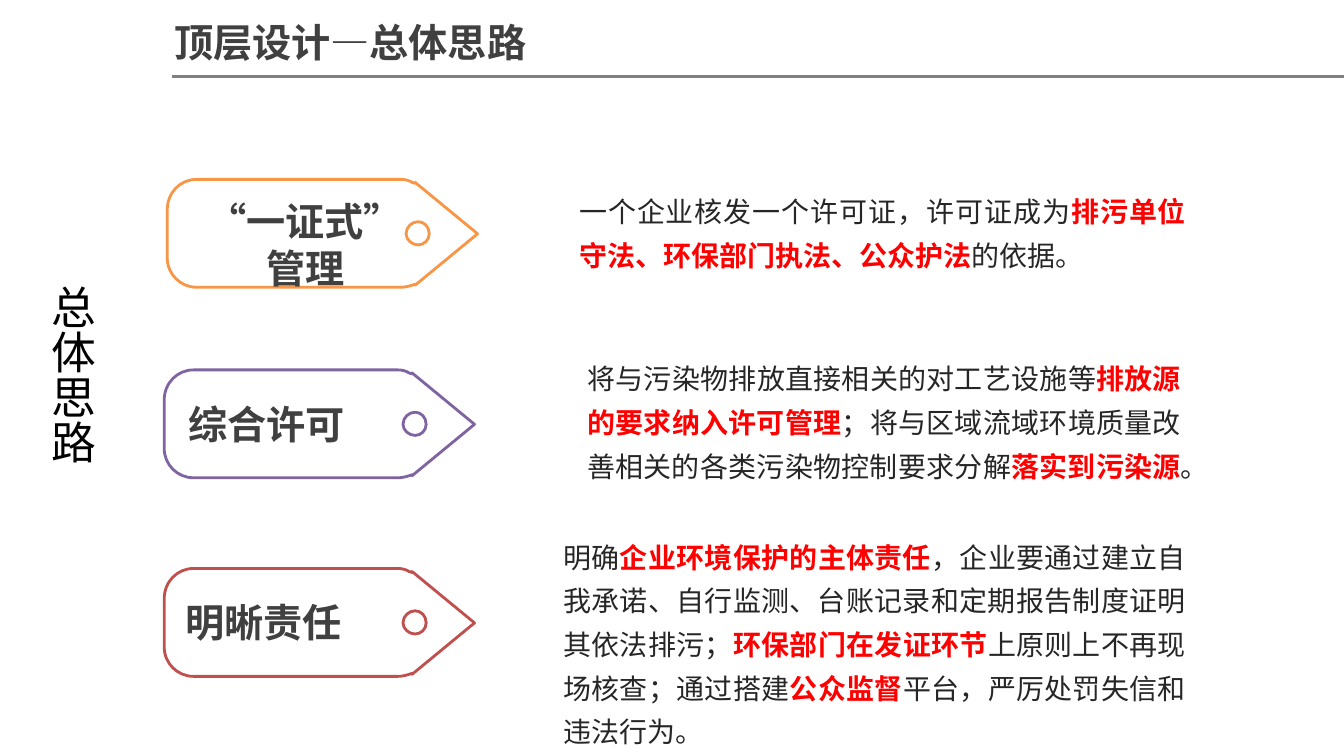
import pptx
import pptx.util
import pptx.dml.color
import pptx.enum.shapes
import pptx.enum.text
import pptx.oxml.ns
from lxml import etree

Inches, Pt, qn = pptx.util.Inches, pptx.util.Pt, pptx.oxml.ns.qn
ALIGN = pptx.enum.text.PP_ALIGN
CJK, LATIN = "Noto Sans CJK SC", "Calibri"
DARK, BODY, RED = "404040", "262626", "FF0000"

TITLE = ("顶层设计—总体思路", (1.63, 0.13, 4.49, 0.57))
SIDE = ("总体思路", (0.29, 2.73, 0.74, 2.68))

ROWS = [
    {"tag": (1.66, 1.78), "color": "F79646",
     "label": ["“一证式”", "管理"], "label_box": (1.72, 1.91, 2.62, 1.04),
     "body_box": (5.65, 1.78, 6.22, 0.98),
     "body": ["一个企业核发一个许可证，许可证成为",
              "排污单位守法、环保部门执法、公众护法", "的依据。"]},
    {"tag": (1.63, 3.67), "color": "8064A2",
     "label": ["综合许可"], "label_box": (1.77, 3.92, 1.77, 0.57),
     "body_box": (5.73, 3.44, 6.09, 1.41),
     "body": ["将与污染物排放直接相关的对工艺设施等", "排放源的要求纳入许可管理",
              "；将与区域流域环境质量改善相关的各类污染物控制要求分解",
              "落实到污染源", "。 "]},
    {"tag": (1.63, 5.64), "color": "C0504D",
     "label": ["明晰责任"], "label_box": (1.74, 5.89, 1.77, 0.57),
     "body_box": (5.49, 5.21, 6.38, 2.29),
     "body": ["明确", "企业环境保护的主体责任",
              "，企业要通过建立自我承诺、自行监测、台账记录和定期报告制度证明其依法排污；",
              "环保部门在发证环节", "上原则上不再现场核查；通过搭建",
              "公众监督", "平台，严厉处罚失信和违法行为。"]},
]

TAG_W, TAG_H = 3.08, 1.07
HOLE = [[(2.49, 0.42)],
        [(2.43, 0.42), (2.37, 0.47), (2.37, 0.54)],
        [(2.37, 0.6), (2.43, 0.65), (2.49, 0.65)],
        [(2.55, 0.65), (2.6, 0.6), (2.6, 0.54)],
        [(2.6, 0.47), (2.55, 0.42), (2.49, 0.42)]]
OUTLINE = [[(0.29, 0)], [(2.32, 0)],
           [(2.36, 0), (2.4, 0.01), (2.43, 0.03)],
           [(2.46, 0.04)], [(2.46, 0.03)], [(3.08, 0.54)],
           [(2.46, 1.05)], [(2.46, 1.04)], [(2.43, 1.05)],
           [(2.4, 1.06), (2.36, 1.07), (2.32, 1.07)],
           [(0.29, 1.07)],
           [(0.13, 1.07), (0, 0.94), (0, 0.78)],
           [(0, 0.3)],
           [(0, 0.13), (0.13, 0), (0.29, 0)]]


def rgb(value):
    return pptx.dml.color.RGBColor.from_string(value)


def add_text(slide, box, paragraphs, size, font, align, spacing=None, wrap=True):
    tf = slide.shapes.add_textbox(*map(Inches, box)).text_frame
    tf.word_wrap = wrap
    tf.auto_size = pptx.enum.text.MSO_AUTO_SIZE.SHAPE_TO_FIT_TEXT
    for i, runs in enumerate(paragraphs):
        p = tf.paragraphs[0] if i == 0 else tf.add_paragraph()
        p.alignment = align
        p.line_spacing = spacing
        for text, color, bold in runs:
            r = p.add_run()
            r.text = text
            r.font.size = Pt(size)
            r.font.bold = bold
            r.font.name = font
            r.font.color.rgb = rgb(color)
            etree.SubElement(r.font._element, qn("a:ea")).set("typeface", CJK)
    return tf


def add_tag(slide, left, top, color):
    shift = (TAG_W - TAG_H) / 2

    def upright(x, y):
        return Inches(left + shift + y), Inches(top - shift + TAG_W - x)

    hole, outline = ([upright(*pt) for step in part for pt in step] for part in (HOLE, OUTLINE))
    fb = slide.shapes.build_freeform(*hole[0])
    fb.add_line_segments(hole[1:], close=True)
    fb.move_to(*outline[0])
    fb.add_line_segments(outline[1:], close=True)
    sp = fb.convert_to_shape()

    segments = iter(list(sp._element.iter(qn("a:lnTo"))))
    for step in HOLE[1:] + OUTLINE[1:]:
        first, *rest = [next(segments) for pt in step]
        if rest:
            first.tag = qn("a:cubicBezTo")
            for segment in rest:
                first.append(segment[0])
                segment.getparent().remove(segment)

    sp.rotation = 90
    sp.shadow.inherit = False
    sp.fill.background()
    sp.line.color.rgb = rgb(color)
    sp.line.width = Pt(2)


def main():
    prs = pptx.Presentation()
    prs.slide_width, prs.slide_height = Inches(13.34), Inches(7.5)
    slide = prs.slides.add_slide(prs.slide_layouts[6])

    rule = slide.shapes.add_connector(pptx.enum.shapes.MSO_CONNECTOR.STRAIGHT,
                                      Inches(1.71), Inches(0.76), Inches(13.34), Inches(0.76))
    rule.line.color.rgb = rgb("808080")
    rule.line.width = Pt(2)
    etree.SubElement(rule._element.spPr, qn("a:effectLst"))

    text, box = TITLE
    add_text(slide, box, [[(text, DARK, True)]], 28, CJK, ALIGN.LEFT)

    for row in ROWS:
        add_tag(slide, *row["tag"], row["color"])
        several = len(row["label"]) > 1
        add_text(slide, row["label_box"], [[(t, DARK, True)] for t in row["label"]],
                 28, LATIN, ALIGN.CENTER if several else ALIGN.LEFT, wrap=several)
        runs = [(t, RED if i % 2 else BODY, bool(i % 2)) for i, t in enumerate(row["body"])]
        add_text(slide, row["body_box"], [runs], 20, CJK, ALIGN.JUSTIFY, 1.3)

    text, box = SIDE
    tf = add_text(slide, box, [[(text, "000000", False)]], 32, LATIN, ALIGN.CENTER)
    tf._txBody.bodyPr.set("vert", "eaVert")

    prs.save("out.pptx")


if __name__ == "__main__":
    main()
